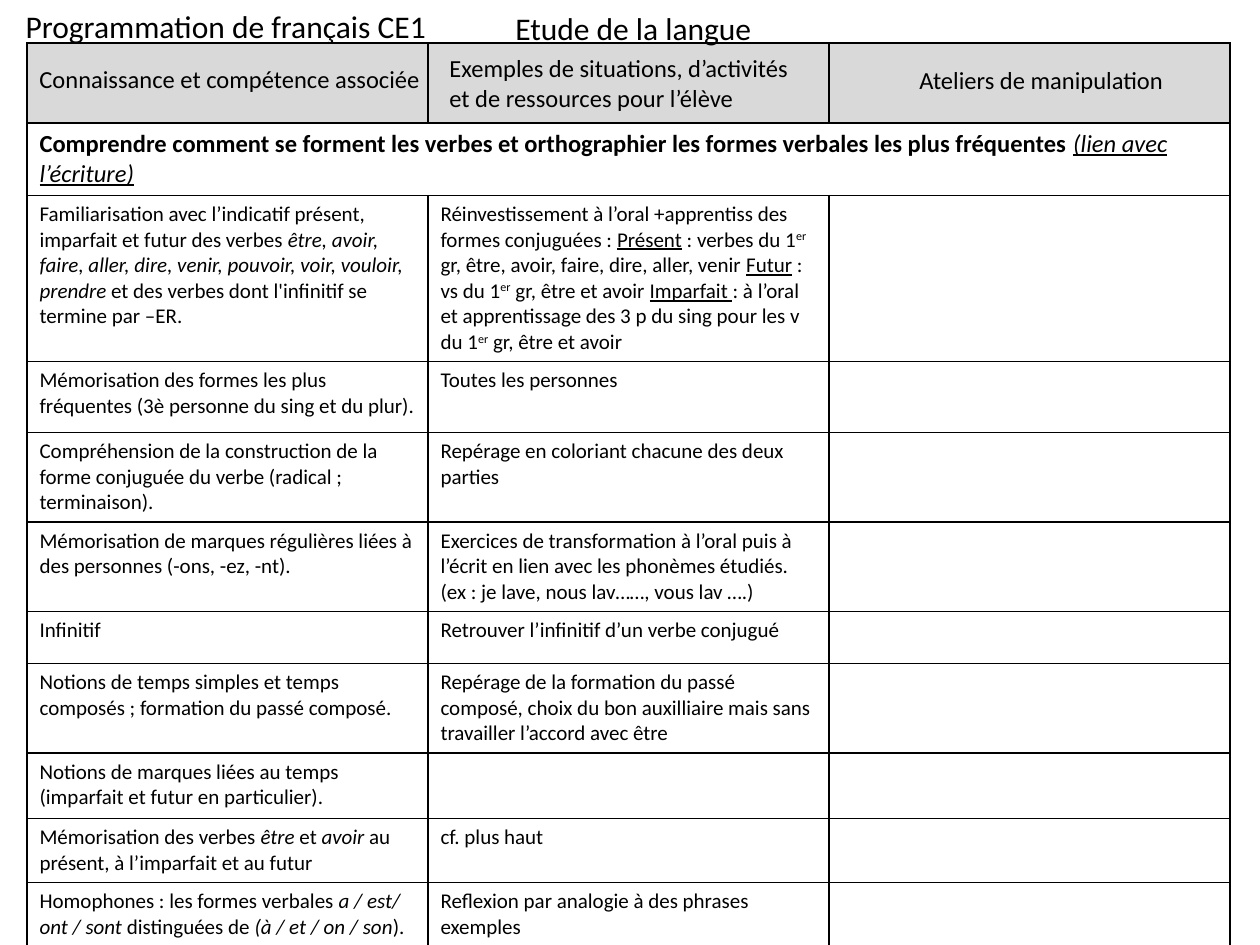
from lxml.etree import SubElement
from pptx import Presentation
from pptx.dml.color import RGBColor
from pptx.enum.text import MSO_ANCHOR as Anchor, MSO_AUTO_SIZE as AutoSize, PP_ALIGN as Align
from pptx.oxml.ns import qn
from pptx.util import Emu, Pt

PX_PER_INCH = 126
FONT = "Calibri"
COLORS = {"text": "000000", "border": "000000", "header": "D9D9D9", "page": "FFFFFF"}
ROW_HEIGHTS = [80, 72, 166, 71, 89, 89, 52, 89, 66, 64, 64]
COLUMN_WIDTH = 401
COLUMN_COUNT = 3

SECTION = [
    ("Comprendre comment se forment les verbes et orthographier les formes verbales les plus fréquentes ", "b"),
    ("(lien avec l’écriture)", "iu"),
]
ROWS = [
    (
        [
            ("Familiarisation avec l’indicatif présent, imparfait et futur des verbes ", ""),
            ("être, avoir, faire, aller, dire, venir, pouvoir, voir, vouloir, prendre ", "i"),
            ("et des verbes dont l'infinitif se termine par –ER.", ""),
        ],
        [
            ("Réinvestissement à l’oral +apprentiss des formes conjuguées : ", ""),
            ("Présent", "u"),
            (" : verbes du 1", ""),
            ("er", "s"),
            (" gr, être, avoir, faire, dire, aller, venir ", ""),
            ("Futur", "u"),
            (" : vs du 1", ""),
            ("er", "s"),
            (" gr, être et avoir ", ""),
            ("Imparfait ", "u"),
            (": à l’oral et apprentissage des 3 p du sing pour les v du 1", ""),
            ("er", "s"),
            (" gr, être et avoir", ""),
        ],
    ),
    (
        [("Mémorisation des formes les plus fréquentes (3è personne du sing et du plur).", "")],
        [("Toutes les personnes", "")],
    ),
    (
        [("Compréhension de la construction de la forme conjuguée du verbe (radical ; terminaison).", "")],
        [("Repérage en coloriant chacune des deux parties", "")],
    ),
    (
        [("Mémorisation de marques régulières liées à des personnes (-ons, -ez, -nt).", "")],
        [("Exercices de transformation à l’oral puis à l’écrit en lien avec les phonèmes étudiés. "
          "(ex : je lave, nous lav……, vous lav ….)", "")],
    ),
    (
        [("Infinitif", "")],
        [("Retrouver l’infinitif d’un verbe conjugué", "")],
    ),
    (
        [("Notions de temps simples et temps composés ; formation du passé composé.", "")],
        [("Repérage de la formation du passé composé, choix du bon auxilliaire "
          "mais sans travailler l’accord avec être", "")],
    ),
    (
        [("Notions de marques liées au temps (imparfait et futur en particulier).", "")],
        [],
    ),
    (
        [
            ("Mémorisation des verbes ", ""),
            ("être", "i"),
            (" et ", ""),
            ("avoir", "i"),
            (" au présent, à l’imparfait et au futur", ""),
        ],
        [("cf. plus haut", "")],
    ),
    (
        [
            ("Homophones : les formes verbales ", ""),
            ("a / est/ ont / sont ", "i"),
            ("distinguées de ", ""),
            ("(à / et / on / son", "i"),
            (").", ""),
        ],
        [("Reflexion par analogie à des phrases exemples", "")],
    ),
]


def px(length):
    """Turn a length in px into EMU."""
    return Emu(round(length * 914400 / PX_PER_INCH))


def add_runs(paragraph, runs, size):
    """Add styled runs: b bold, i italic, u underline, s superscript."""
    for text, style in runs:
        run = paragraph.add_run()
        run.text = text
        font = run.font
        font.name, font.size = FONT, Pt(size)
        font.color.rgb = RGBColor.from_string(COLORS["text"])
        font.bold, font.italic, font.underline = ("b" in style, "i" in style, "u" in style)
        if "s" in style:
            run._r.get_or_add_rPr().set("baseline", "30000")


def format_label(shape, lines, size, wrap=False):
    """Fill a text shape with left-aligned lines of one size."""
    frame = shape.text_frame
    frame.word_wrap = wrap
    frame.auto_size = AutoSize.SHAPE_TO_FIT_TEXT
    frame.vertical_anchor = Anchor.TOP
    for index, line in enumerate(lines):
        paragraph = frame.add_paragraph() if index else frame.paragraphs[0]
        paragraph.alignment = Align.LEFT
        paragraph.line_spacing = 1.0
        paragraph.space_before = Pt(0)
        add_runs(paragraph, [(line, "")], size)


def add_label(slide, box, lines, size, wrap=False):
    """Add a text box at the given box."""
    shape = slide.shapes.add_textbox(*map(px, box))
    format_label(shape, lines, size, wrap)


def format_cell(cell, fill=None):
    """Give a cell thin borders and a fill."""
    properties = cell._tc.get_or_add_tcPr()
    for side in ("lnL", "lnR", "lnT", "lnB"):
        line = SubElement(properties, qn(f"a:{side}"), w=str(Pt(1)))
        solid = SubElement(line, qn("a:solidFill"))
        SubElement(solid, qn("a:srgbClr"), val=COLORS["border"])
    if fill:
        cell.fill.solid()
        cell.fill.fore_color.rgb = RGBColor.from_string(fill)
    else:
        cell.fill.background()


def add_programme(slide, left, top):
    """Add the programme table and the labels over its header row."""
    width = COLUMN_WIDTH * COLUMN_COUNT
    frame = slide.shapes.add_table(
        len(ROW_HEIGHTS), COLUMN_COUNT, px(left), px(top), px(width), px(sum(ROW_HEIGHTS)))
    table = frame.table
    table.first_row = table.horz_banding = False
    for column in table.columns:
        column.width = px(COLUMN_WIDTH)
    for index, (row, height) in enumerate(zip(table.rows, ROW_HEIGHTS)):
        row.height = px(height)
        for cell in row.cells:
            format_cell(cell, None if index else COLORS["header"])
    table.cell(1, 0).merge(table.cell(1, COLUMN_COUNT - 1))
    add_runs(table.cell(1, 0).text_frame.paragraphs[0], SECTION, 14)
    for row_index, row in enumerate(ROWS, start=2):
        for column_index, runs in enumerate(row):
            add_runs(table.cell(row_index, column_index).text_frame.paragraphs[0], runs, 12)

    add_label(slide, (left, top + 15, 409, 43), ["Connaissance et compétence associée"], 14)
    add_label(slide, (left + 410, top + 4, 370, 72),
              ["Exemples de situations, d’activités", "et de ressources pour l’élève"], 14, wrap=True)
    add_label(slide, (left + 880, top + 16, 272, 43), ["Ateliers de manipulation"], 14)


def add_heading(slide, left, top):
    """Place the slide title and the subject beside it."""
    title = slide.shapes.title
    title.left, title.top, title.width, title.height = map(px, (left, top, 432, 50))
    format_label(title, ["Programmation de français CE1"], 18)
    slide.shapes._spTree.append(title._element)
    add_label(slide, (left + 490, top + 2, 265, 50), ["Etude de la langue"], 18)


def main():
    """Build and save the slide."""
    presentation = Presentation()
    presentation.slide_width, presentation.slide_height = px(1260), px(945)
    slide = presentation.slides.add_slide(presentation.slide_layouts[5])
    background = slide.background.fill
    background.solid()
    background.fore_color.rgb = RGBColor.from_string(COLORS["page"])
    add_programme(slide, 27, 43)
    add_heading(slide, 13, 1)
    presentation.save("out.pptx")


if __name__ == "__main__":
    main()
